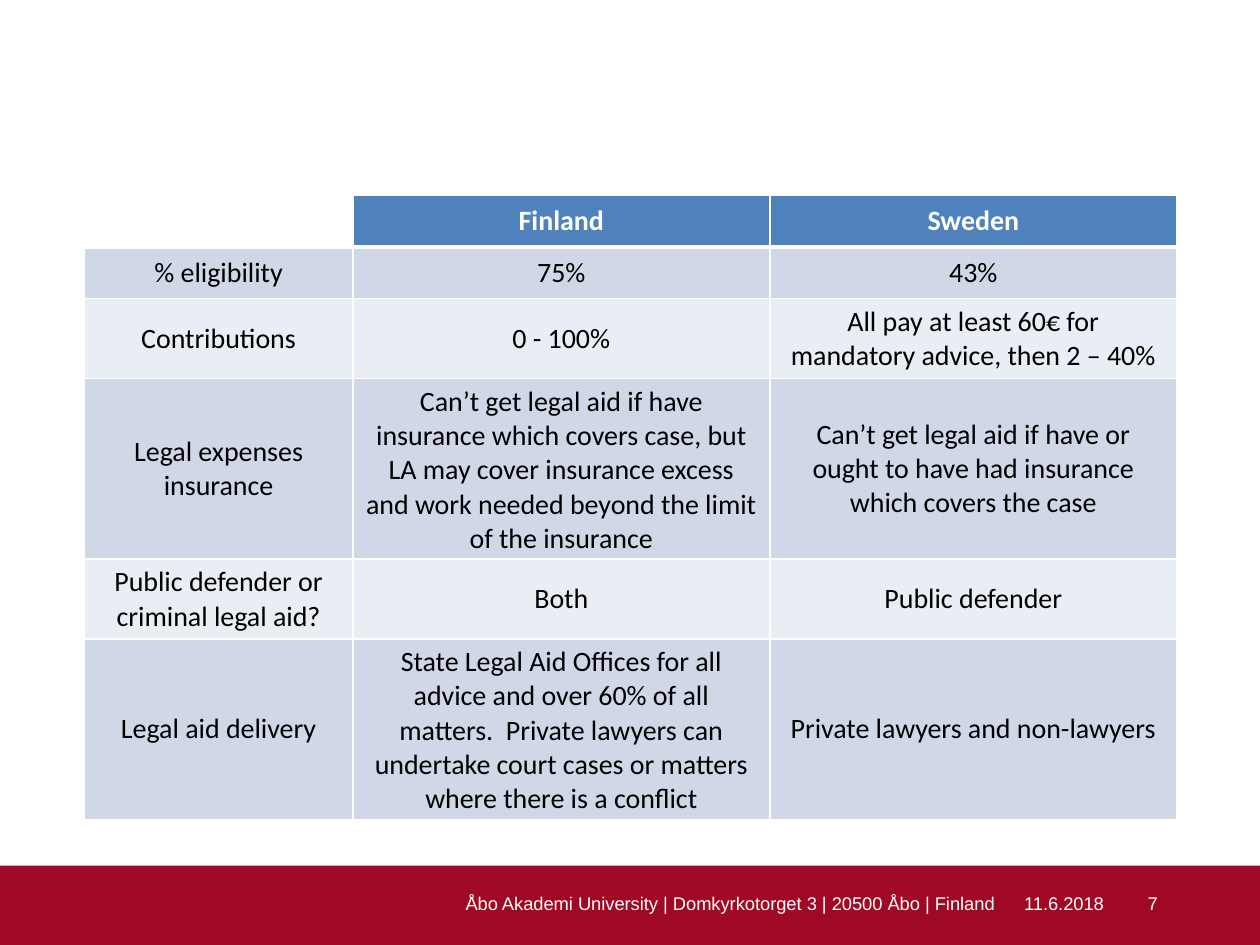
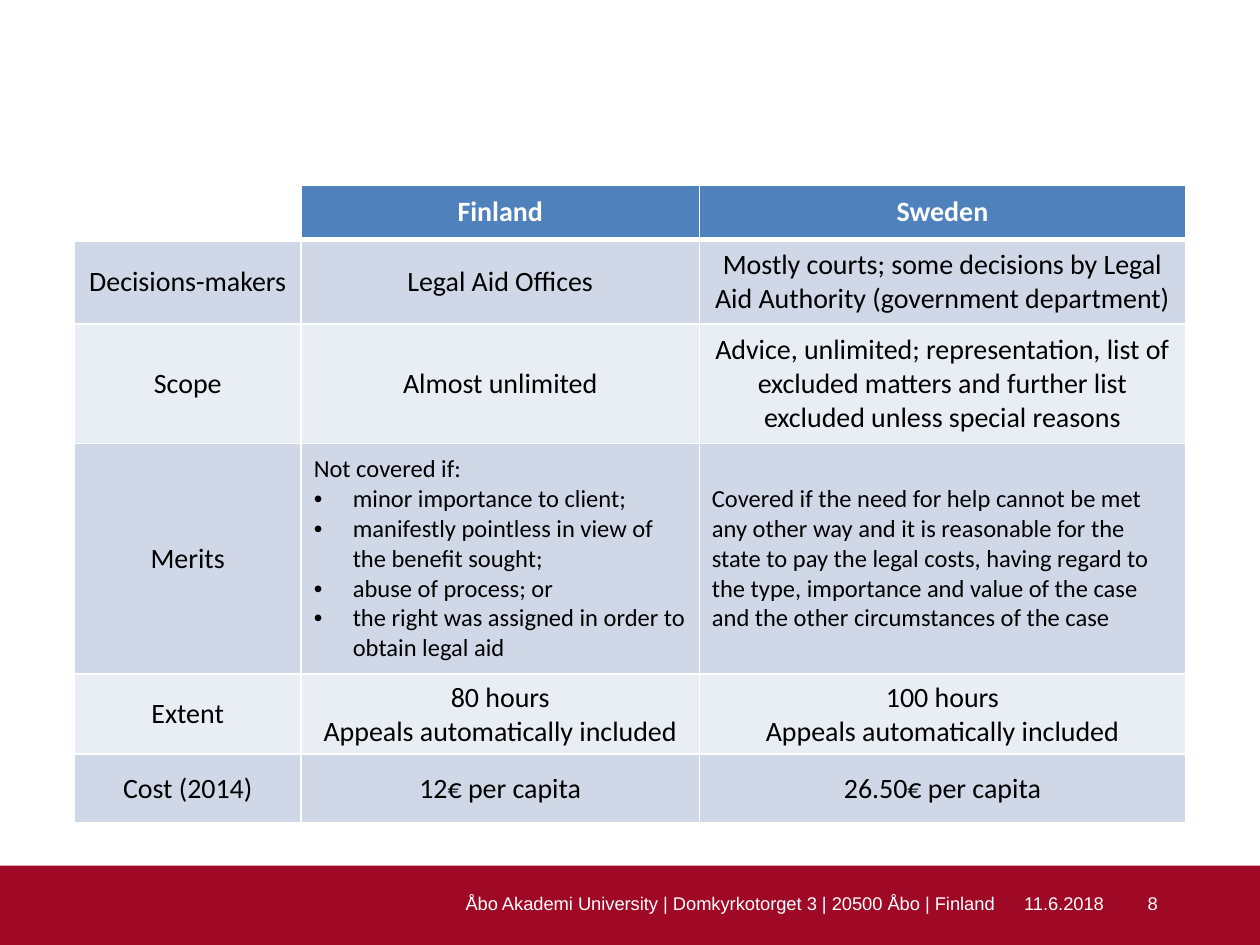
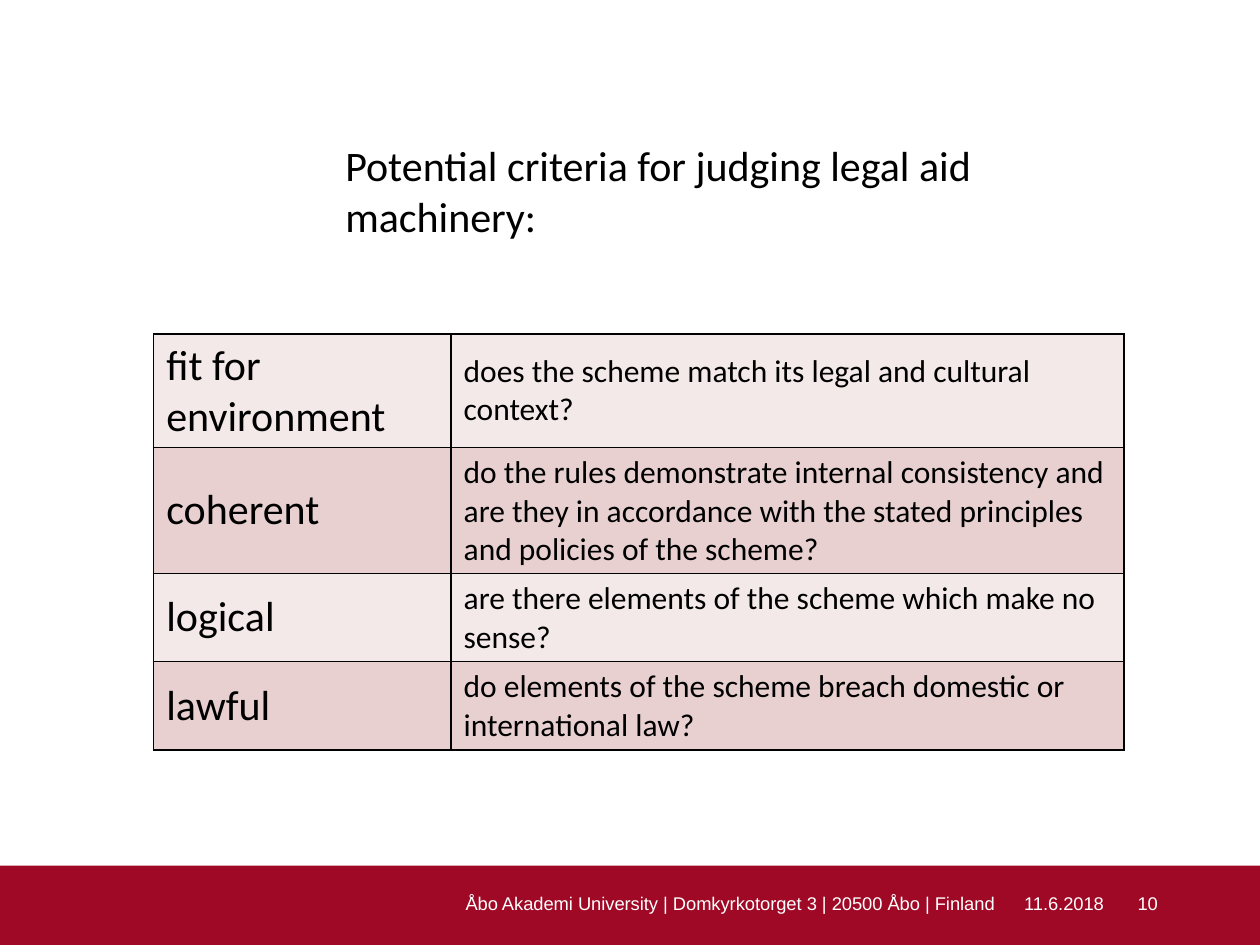
from dataclasses import dataclass
from itertools import cycle
from typing import NamedTuple, Union

from lxml import etree
from pptx import Presentation
from pptx.dml.color import RGBColor
from pptx.enum import shapes, text
from pptx.oxml import ns
from pptx.util import Inches, Pt

RED, BLUE, WHITE, BLACK = "9F0926", "4F81BD", "FFFFFF", "000000"
BLUE_BANDS = ("D0D8E8", "E9EDF4")
PINK_BANDS = ("F4E9E9", "E8D0D0")
BODY_FONT, FOOTER_FONT = "Calibri", "Arial"
LEFT, CENTER, RIGHT = text.PP_ALIGN.LEFT, text.PP_ALIGN.CENTER, text.PP_ALIGN.RIGHT
TITLE_ONLY, BLANK = 5, 6


class Box(NamedTuple):
    left: float
    top: float
    width: float
    height: float

    def inches(self) -> list:
        return [Inches(v) for v in self]


class Note(NamedTuple):
    """Left-aligned small text of a cell, with bullets under it."""
    lead: str
    bullets: tuple = ()


class FooterItem(NamedTuple):
    text: str
    box: Box
    margin: float = 0.1


@dataclass
class Grid:
    left: float
    top: float
    widths: tuple
    heights: tuple
    rows: list[tuple[Union[str, Note], ...]]
    bands: tuple
    line: str
    sizes: tuple
    align: int
    header: bool = False


NOTE_SIZE = 14
TITLE_BOX = Box(2.64, 1.06, 5.91, 0.91)
BAND_BOX = Box(-0.01, 6.87, 10.02, 0.64)
FOOTER = [
    FooterItem("Åbo Akademi University | Domkyrkotorget 3 | 20500 Åbo | Finland",
               Box(3.43, 6.97, 4.57, 0.4)),
    FooterItem("11.6.2018", Box(7.99, 6.97, 0.87, 0.4)),
]
NUMBER_BOX = Box(8.86, 6.97, 0.33, 0.4)

COUNTRY_STYLE = dict(bands=BLUE_BANDS, line=WHITE, sizes=(16, 16, 16), align=CENTER,
                     header=True)
COUNTRIES = ("", "Finland", "Sweden")

ELIGIBILITY = Grid(
    0.67, 1.55, (2.13, 3.31, 3.23), (0.41, 0.41, 0.63, 1.43, 0.63, 1.43),
    [
        COUNTRIES,
        ("% eligibility", "75%", "43%"),
        ("Contributions", "0 - 100%",
         "All pay at least 60€ for mandatory advice, then 2 – 40%"),
        ("Legal expenses insurance",
         "Can’t get legal aid if have insurance which covers case, but LA may cover "
         "insurance excess and work needed beyond the limit of the insurance",
         "Can’t get legal aid if have or ought to have had insurance which covers the case"),
        ("Public defender or criminal legal aid?", "Both", "Public defender"),
        ("Legal aid delivery",
         "State Legal Aid Offices for all advice and over 60% of all matters.  Private "
         "lawyers can undertake court cases or matters where there is a conflict",
         "Private lawyers and non-lawyers"),
    ],
    **COUNTRY_STYLE)

DECISIONS = Grid(
    0.59, 1.47, (1.8, 3.16, 3.86), (0.43, 0.67, 0.95, 1.83, 0.62, 0.55),
    [
        COUNTRIES,
        ("Decisions-makers", "Legal Aid Offices",
         "Mostly courts; some decisions by Legal Aid Authority (government department)"),
        ("Scope", "Almost unlimited",
         "Advice, unlimited; representation, list of excluded matters and further list "
         "excluded unless special reasons"),
        ("Merits",
         Note("Not covered if:", (
             "minor importance to client;",
             "manifestly pointless in view of the benefit sought;",
             "abuse of process; or",
             "the right was assigned in order to obtain legal aid")),
         Note("Covered if the need for help cannot be met any other way and it is "
              "reasonable for the state to pay the legal costs, having regard to the type, "
              "importance and value of the case and the other circumstances of the case")),
        ("Extent", "80 hours\nAppeals automatically included",
         "100 hours\nAppeals automatically included"),
        ("Cost (2014)", "12€ per capita", "26.50€ per capita"),
    ],
    **COUNTRY_STYLE)

CRITERIA = Grid(
    1.22, 2.65, (2.36, 5.34), (0.9, 1.0, 0.7, 0.7),
    [
        ("fit for environment", "does the scheme match its legal and cultural context?"),
        ("coherent",
         "do the rules demonstrate internal consistency and are they in accordance with "
         "the stated principles and policies of the scheme?"),
        ("logical", "are there elements of the scheme which make no sense?"),
        ("lawful", "do elements of the scheme breach domestic or international law?"),
    ],
    bands=PINK_BANDS, line=BLACK, sizes=(24, 18), align=LEFT)


def rgb(value: str) -> RGBColor:
    return RGBColor.from_string(value)


def style_paragraph(p, font: str, size: float, color: str, align: int,
                    bold: bool = False) -> None:
    p.alignment = align
    for r in p.runs:
        r.font.name, r.font.size, r.font.bold = font, Pt(size), bold
        r.font.color.rgb = rgb(color)


def add_bullet(p) -> None:
    pPr = p._p.get_or_add_pPr()
    pPr.set("marL", str(Inches(0.31)))
    pPr.set("indent", str(-Inches(0.31)))
    etree.SubElement(pPr, ns.qn("a:buFont"), typeface="Arial")
    etree.SubElement(pPr, ns.qn("a:buChar"), char="•")


def set_borders(cell, color: str, top: float, bottom: float) -> None:
    tcPr = cell._tc.get_or_add_tcPr()
    for i, (side, width) in enumerate(zip("LRTB", (1, 1, top, bottom))):
        ln = etree.Element(ns.qn(f"a:ln{side}"), w=str(Pt(width)))
        fill = etree.SubElement(ln, ns.qn("a:solidFill"))
        etree.SubElement(fill, ns.qn("a:srgbClr"), val=color)
        tcPr.insert(i, ln)


def fill_cell(cell, content: Union[str, Note], size: float, color: str, align: int,
              bold: bool) -> None:
    cell.vertical_anchor = text.MSO_ANCHOR.MIDDLE
    bullets = ()
    if isinstance(content, Note):
        content, bullets = content
        size, align = NOTE_SIZE, LEFT
    tf = cell.text_frame
    tf.text = content
    for bullet in bullets:
        p = tf.add_paragraph()
        p.text = bullet
        add_bullet(p)
    for p in tf.paragraphs:
        style_paragraph(p, BODY_FONT, size, color, align, bold)


def add_grid(slide, grid: Grid) -> None:
    box = Box(grid.left, grid.top, sum(grid.widths), sum(grid.heights))
    table = slide.shapes.add_table(len(grid.heights), len(grid.widths), *box.inches()).table
    table.first_row = table.horz_banding = False
    for column, width in zip(table.columns, grid.widths):
        column.width = Inches(width)
    bands = cycle(grid.bands)
    for i, (row, height, contents) in enumerate(zip(table.rows, grid.heights, grid.rows)):
        row.height = Inches(height)
        is_header = grid.header and i == 0
        band = BLUE if is_header else next(bands)
        color = WHITE if is_header else BLACK
        for cell, content, size in zip(row.cells, contents, grid.sizes):
            fill_cell(cell, content, size, color, grid.align, is_header)
            if content:
                cell.fill.solid()
                cell.fill.fore_color.rgb = rgb(band)
            else:
                cell.fill.background()
            set_borders(cell, grid.line, top=3 if grid.header and i == 1 else 1,
                        bottom=3 if is_header else 1)


def add_footer(slide, number: int) -> None:
    band = slide.shapes.add_shape(shapes.MSO_SHAPE.RECTANGLE, *BAND_BOX.inches())
    band.shadow.inherit = False
    band.fill.solid()
    band.fill.fore_color.rgb = rgb(RED)
    band.line.fill.background()
    for item in FOOTER + [FooterItem(str(number), NUMBER_BOX, margin=0)]:
        tf = slide.shapes.add_textbox(*item.box.inches()).text_frame
        tf.word_wrap = True
        tf.vertical_anchor = text.MSO_ANCHOR.MIDDLE
        tf.margin_left = tf.margin_right = Inches(item.margin)
        tf.text = item.text
        style_paragraph(tf.paragraphs[0], FOOTER_FONT, 10.5, WHITE, RIGHT)


def set_title(slide, title: str) -> None:
    sp = slide.shapes.title
    sp.left, sp.top, sp.width, sp.height = TITLE_BOX.inches()
    tf = sp.text_frame
    tf.text = title
    tf.word_wrap = True
    tf.auto_size = text.MSO_AUTO_SIZE.NONE
    tf.vertical_anchor = text.MSO_ANCHOR.TOP
    style_paragraph(tf.paragraphs[0], BODY_FONT, 24, BLACK, LEFT)


def add_slide(prs, number: int, grid: Grid, title: str = "") -> None:
    slide = prs.slides.add_slide(prs.slide_layouts[TITLE_ONLY if title else BLANK])
    add_footer(slide, number)
    if title:
        set_title(slide, title)
    add_grid(slide, grid)


def main() -> None:
    prs = Presentation()
    prs.slide_width, prs.slide_height = Inches(10), Inches(7.5)
    add_slide(prs, 7, ELIGIBILITY)
    add_slide(prs, 8, DECISIONS)
    add_slide(prs, 10, CRITERIA, "Potential criteria for judging legal aid machinery:")
    prs.save("out.pptx")


if __name__ == "__main__":
    main()
